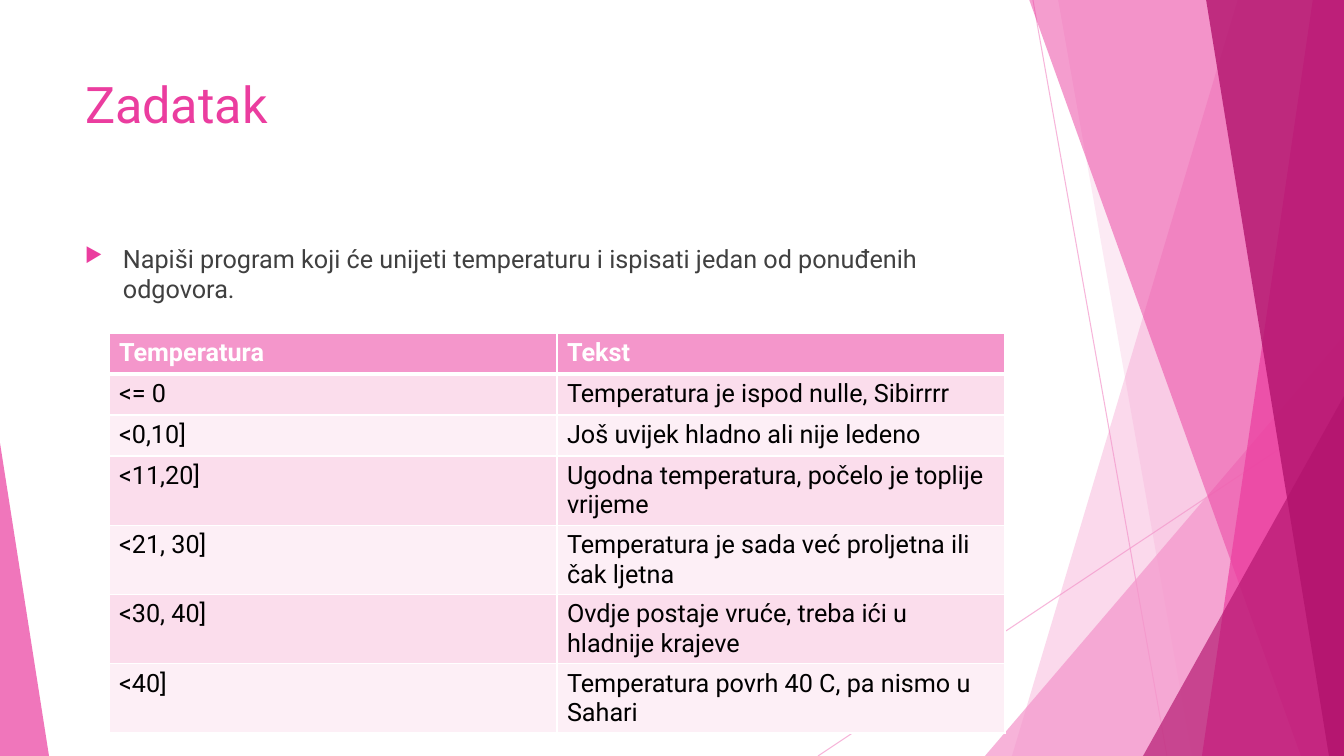
from pptx import Presentation
from pptx import util as u
from pptx.dml.color import RGBColor
from pptx.enum import shapes, text
from pptx.oxml import parse_xml
from pptx.oxml.ns import nsdecls, qn

PINK = RGBColor(0xF4, 0x96, 0xCB)
MAGENTA = RGBColor(0xEB, 0x3D, 0x9F)
PLUM = RGBColor(0xB2, 0x13, 0x6D)
ROSE = RGBColor(0xFB, 0xDD, 0xEC)
BLUSH = RGBColor(0xFD, 0xEF, 0xF6)
GREY = RGBColor(0x40, 0x40, 0x40)
BLACK = RGBColor(0, 0, 0)
WHITE = RGBColor(0xFF, 0xFF, 0xFF)

WIDTH, HEIGHT = 1344, 756
SCALE = u.Inches(1) / 100.8
FONT = "Roboto"

TITLE = "Zadatak"
TASK = "Napiši program koji će unijeti temperaturu i ispisati jedan od ponuđenih odgovora."
ANSWERS = [
    ("Temperatura", "Tekst", 41),
    ("<= 0", "Temperatura je ispod nulle, Sibirrrr", 41),
    ("<0,10]", "Još uvijek hladno ali nije ledeno", 41),
    ("<11,20]", "Ugodna temperatura, počelo je toplije vrijeme", 69),
    ("<21, 30]", "Temperatura je sada već proljetna ili čak ljetna", 69),
    ("<30, 40]", "Ovdje postaje vruće, treba ići u hladnije krajeve", 69),
    ("<40]", "Temperatura povrh 40 C, pa nismo u Sahari", 69),
]
RAYS = [((1033, 0), (1167, HEIGHT)), ((WIDTH, 406), (818, HEIGHT))]
FACETS = [
    ("band", (1238, 1012), PINK, 36),
    ("band", (1058, 1192), PINK, 20),
    ("triangle", (985, 336, 359, 420, 1), PINK, 72),
    ("band", (1029, 1301), MAGENTA, 50),
    ("band", (1313, 1202), MAGENTA, 70),
    ("band", (1206, 1329), PLUM, 80),
    ("triangle", (1143, 396, 201, 360, 1), PLUM, 66),
    ("triangle", (0, 443, 49, 313, 0), MAGENTA, 70),
]


def px(*lengths):
    return [round(length * SCALE) for length in lengths]


def set_opacity(shape, percent):
    for color in shape._element.iter(qn("a:srgbClr")):
        color.append(parse_xml(f'<a:alpha {nsdecls("a")} val="{percent * 1000}"/>'))


def add_ray(page, start, end):
    ray = page.shapes.add_connector(shapes.MSO_CONNECTOR.STRAIGHT, *px(*start, *end))
    ray.line.color.rgb = PINK
    ray.line.width = u.Pt(0.75)
    ray._element.spPr.append(parse_xml(f'<a:effectLst {nsdecls("a")}/>'))
    set_opacity(ray, 70)


def add_facet(page, kind, geometry, color, opacity):
    if kind == "band":
        top_x, bottom_x = geometry
        outline = page.shapes.build_freeform(top_x, -1, scale=SCALE)
        outline.add_line_segments([(WIDTH, -1), (WIDTH, HEIGHT), (bottom_x, HEIGHT)])
        facet = outline.convert_to_shape()
    else:
        *frame, apex = geometry
        facet = page.shapes.add_shape(shapes.MSO_SHAPE.ISOSCELES_TRIANGLE, *px(*frame))
        facet.adjustments[0] = apex
    facet.shadow.inherit = False
    facet.fill.solid()
    facet.fill.fore_color.rgb = color
    facet.line.fill.background()
    set_opacity(facet, opacity)


def write(frame, content, size, color, bold=False):
    para = frame.paragraphs[0]
    para.alignment = text.PP_ALIGN.LEFT
    span = para.add_run()
    span.text = content
    for name, value in {"name": FONT, "size": u.Pt(size), "bold": bold}.items():
        setattr(span.font, name, value)
    span.font.color.rgb = color
    return para


def place(box, *frame):
    for name, value in zip(("left", "top", "width", "height"), px(*frame)):
        setattr(box, name, value)
    settings = {
        "word_wrap": True,
        "auto_size": text.MSO_AUTO_SIZE.NONE,
        "vertical_anchor": text.MSO_ANCHOR.TOP,
    }
    for name, value in settings.items():
        setattr(box.text_frame, name, value)


def add_task(page):
    box = page.shapes.add_textbox(0, 0, 0, 0)
    place(box, 75, 238, 948, 94)
    props = box.text_frame.paragraphs[0]._p.get_or_add_pPr()
    indent = px(38)[0]
    props.set("marL", str(indent))
    props.set("indent", str(-indent))
    for bullet in (
        f'<a:buClr {nsdecls("a")}><a:srgbClr val="{MAGENTA}"/></a:buClr>',
        f'<a:buSzPct {nsdecls("a")} val="80000"/>',
        f'<a:buChar {nsdecls("a")} char="▶"/>',
    ):
        props.append(parse_xml(bullet))
    write(box.text_frame, TASK, 18, GREY)


def set_borders(cell, bottom):
    props = cell._tc.get_or_add_tcPr()
    for side, points in {"L": 1, "R": 1, "T": 1, "B": bottom}.items():
        props.append(parse_xml(
            f'<a:ln{side} {nsdecls("a")} w="{u.Pt(points)}"><a:solidFill>'
            f'<a:srgbClr val="{WHITE}"/></a:solidFill></a:ln{side}>'))


def add_answers(page):
    total = sum(height for _, _, height in ANSWERS)
    table = page.shapes.add_table(len(ANSWERS), 2, *px(109, 333, 896, total)).table
    for row, (*contents, height) in enumerate(ANSWERS):
        table.rows[row].height = px(height)[0]
        header = row == 0
        for column, content in enumerate(contents):
            cell = table.cell(row, column)
            set_borders(cell, 3 if header or row == 1 and False else 1)
            cell.fill.solid()
            cell.fill.fore_color.rgb = PINK if header else (BLUSH, ROSE)[row % 2]
            write(cell.text_frame, content, 18, WHITE if header else BLACK, header)


def main():
    deck = Presentation()
    deck.slide_width, deck.slide_height = px(WIDTH, HEIGHT)
    page = deck.slides.add_slide(deck.slide_layouts[5])
    for start, end in RAYS:
        add_ray(page, start, end)
    for facet in FACETS:
        add_facet(page, *facet)
    title = page.shapes.title
    place(title, 75, 68, 948, 145)
    write(title.text_frame, TITLE, 36, MAGENTA)
    add_task(page)
    add_answers(page)
    deck.save("out.pptx")


if __name__ == "__main__":
    main()
